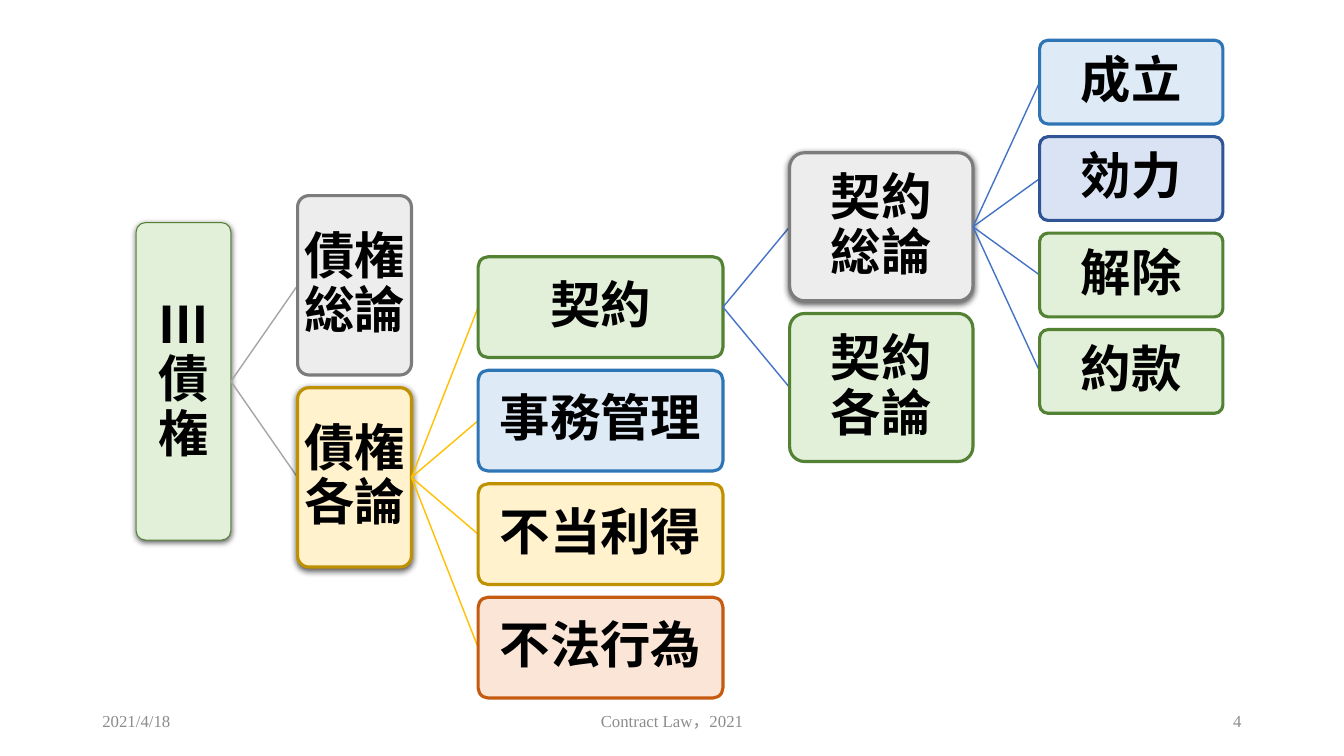
from dataclasses import dataclass

from lxml import etree
from pptx import Presentation
from pptx import util as u
from pptx.dml.color import RGBColor
from pptx.enum import shapes, text
from pptx.oxml import ns

FONT = "Times New Roman"
ROW_GAP = 0.32
COLUMN_GAP = 1.68
ROOT_LEFT, ROOT_MIDDLE = 3.43, 9.61


@dataclass(frozen=True)
class Palette:
    fill: str
    line: str


GREEN = Palette("E2F0D9", "548235")
GRAY = Palette("EDEDED", "7C7C7C")
GOLD = Palette("FFF2CC", "BF9000")
BLUE = Palette("DEEBF7", "2E75B6")
INDIGO = Palette("DAE3F3", "2F5597")
ORANGE = Palette("FBE5D6", "C55A11")


@dataclass(frozen=True)
class Level:
    """Box size in cm, outline in points, and colour of the branches to the next level."""
    width: float
    height: float
    outline: float
    branch: str = ""


@dataclass(frozen=True)
class Topic:
    lines: tuple[str, ...]
    palette: Palette
    raised: bool = False
    children: tuple["Topic", ...] = ()


@dataclass(frozen=True)
class Footer:
    words: str
    left: float
    width: float
    align: text.PP_ALIGN


LEVELS = (
    Level(2.39, 8.0, 0.75, "A5A5A5"),
    Level(2.87, 4.52, 2.25, "FFC000"),
    Level(6.17, 2.54, 2.25, "4472C4"),
    Level(4.62, 3.73, 2.25, "4472C4"),
    Level(4.62, 2.11, 2.25),
)

GENERAL_CONTRACT = Topic(("契約", "総論"), GRAY, True, (
    Topic(("成立",), BLUE),
    Topic(("効力",), INDIGO),
    Topic(("解除",), GREEN),
    Topic(("約款",), GREEN),
))
CONTRACT = Topic(("契約",), GREEN, False, (
    GENERAL_CONTRACT,
    Topic(("契約", "各論"), GREEN),
))
SPECIFIC_CLAIMS = Topic(("債権", "各論"), GOLD, True, (
    CONTRACT,
    Topic(("事務管理",), BLUE),
    Topic(("不当利得",), GOLD),
    Topic(("不法行為",), ORANGE),
))
CLAIMS = Topic(("Ⅲ", "債", "権"), GREEN, True, (
    Topic(("債権", "総論"), GRAY),
    SPECIFIC_CLAIMS,
))

FOOTERS = (
    Footer("2021/4/18", 2.33, 7.62, text.PP_ALIGN.LEFT),
    Footer("Contract Law，2021", 11.22, 11.43, text.PP_ALIGN.CENTER),
    Footer("4", 23.92, 7.62, text.PP_ALIGN.RIGHT),
)


def color(value: str) -> RGBColor:
    return RGBColor.from_string(value)


def add_span(para, words: str, size: float, ink: str, bold: bool = False) -> None:
    span = para.add_run()
    span.text = words
    span.font.name = FONT
    span.font.size = u.Pt(size)
    span.font.bold = bold
    span.font.color.rgb = color(ink)


def add_shadow(box) -> None:
    effects = box._element.spPr.find(ns.qn("a:effectLst"))
    shadow = etree.SubElement(effects, ns.qn("a:outerShdw"), blurRad=str(u.Pt(4.5)),
                              dist=str(u.Pt(1.5)), dir="5400000", algn="ctr", rotWithShape="0")
    black = etree.SubElement(shadow, ns.qn("a:srgbClr"), val="000000")
    etree.SubElement(black, ns.qn("a:alpha"), val="63000")


def add_branch(page, start: tuple[float, float], end: tuple[float, float], ink: str) -> None:
    branch = page.shapes.add_connector(shapes.MSO_CONNECTOR.STRAIGHT,
                                       *(u.Cm(value) for value in start + end))
    branch.line.color.rgb = color(ink)
    branch.line.width = u.Pt(1)
    etree.SubElement(branch._element.spPr, ns.qn("a:effectLst"))


def add_box(page, topic: Topic, level: Level, left: float, middle: float) -> None:
    box = page.shapes.add_shape(shapes.MSO_SHAPE.ROUNDED_RECTANGLE,
                                u.Cm(left), u.Cm(middle - level.height / 2),
                                u.Cm(level.width), u.Cm(level.height))
    box.adjustments[0] = 0.1
    box.fill.solid()
    box.fill.fore_color.rgb = color(topic.palette.fill)
    box.line.color.rgb = color(topic.palette.line)
    box.line.width = u.Pt(level.outline)
    box.shadow.inherit = False
    if topic.raised:
        add_shadow(box)

    frame = box.text_frame
    frame.word_wrap = False
    frame.vertical_anchor = text.MSO_ANCHOR.MIDDLE
    frame.margin_left = frame.margin_right = u.Cm(0.08)
    frame.margin_top = frame.margin_bottom = u.Cm(0.08)
    para = frame.paragraphs[0]
    para.alignment = text.PP_ALIGN.CENTER
    para.line_spacing = 0.9
    for index, line in enumerate(topic.lines):
        if index:
            para.add_line_break()
        add_span(para, line, 36, "000000", bold=True)


def add_tree(page, topic: Topic, left: float, middle: float, depth: int = 0) -> None:
    """Draw a topic, with its children stacked to the right around its middle."""
    level = LEVELS[depth]
    add_box(page, topic, level, left, middle)
    if not topic.children:
        return
    right = left + level.width
    child_left = right + COLUMN_GAP
    pitch = LEVELS[depth + 1].height + ROW_GAP
    first_middle = middle - pitch * (len(topic.children) - 1) / 2
    for row, child in enumerate(topic.children):
        child_middle = first_middle + row * pitch
        add_branch(page, (right, middle), (child_left, child_middle), level.branch)
        add_tree(page, child, child_left, child_middle, depth + 1)


def add_footer(page, footer: Footer) -> None:
    box = page.shapes.add_textbox(u.Cm(footer.left), u.Cm(17.66), u.Cm(footer.width), u.Cm(1.01))
    frame = box.text_frame
    frame.word_wrap = True
    frame.vertical_anchor = text.MSO_ANCHOR.MIDDLE
    para = frame.paragraphs[0]
    para.alignment = footer.align
    add_span(para, footer.words, 12, "8C8C8C")


def main() -> None:
    deck = Presentation()
    deck.slide_width, deck.slide_height = u.Cm(33.87), u.Cm(19.05)
    page = deck.slides.add_slide(deck.slide_layouts[6])
    add_tree(page, CLAIMS, ROOT_LEFT, ROOT_MIDDLE)
    for footer in FOOTERS:
        add_footer(page, footer)
    deck.save("out.pptx")


if __name__ == "__main__":
    main()
